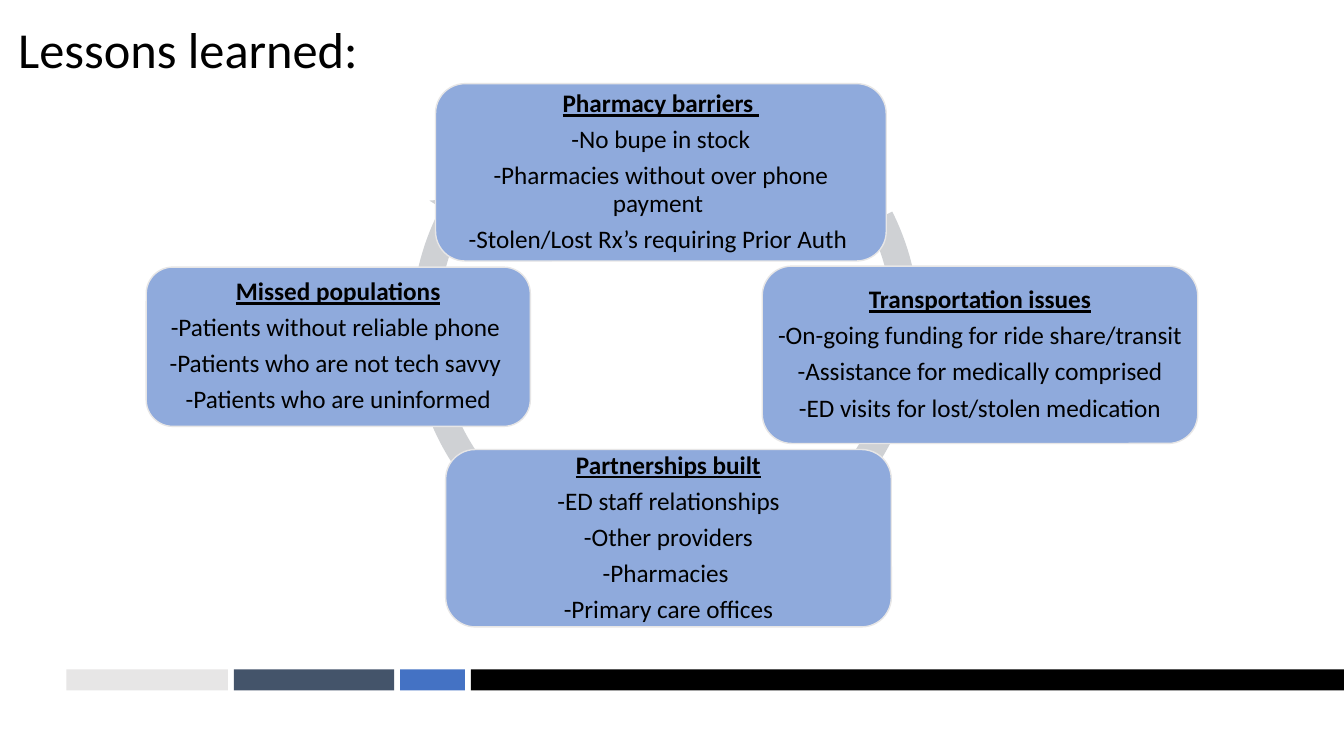
from pptx import Presentation
from pptx.dml.color import RGBColor
from pptx.enum.shapes import MSO_SHAPE as Shape
from pptx.enum.text import MSO_ANCHOR as Anchor, PP_ALIGN as Align
from pptx.util import Inches, Pt

COLORS = {
    "text": "000000",
    "card": "8FAADC",
    "card_line": "E7E6E6",
    "cycle": "CFD1D4",
    "pale": "E7E6E6",
    "slate": "44546A",
    "blue": "4472C4",
    "black": "000000",
}


def add_filled(preset, box, color):
    shape = slide.shapes.add_shape(preset, *[Inches(v) for v in box])
    shape.shadow.inherit = False
    shape.fill.solid()
    shape.fill.fore_color.rgb = RGBColor.from_string(COLORS[color])
    shape.line.fill.background()
    return shape


def write(paragraph, text, size=18, align=Align.CENTER, heading=False,
          line_spacing=0.9, space_after=6.3):
    paragraph.alignment = align
    paragraph.line_spacing = line_spacing
    paragraph.space_before = Pt(0)
    paragraph.space_after = Pt(space_after)
    run = paragraph.add_run()
    run.text = text
    run.font.name = "Calibri"
    run.font.size = Pt(size)
    run.font.bold = heading
    run.font.underline = heading
    run.font.color.rgb = RGBColor.from_string(COLORS["text"])


deck = Presentation()
deck.slide_width = Inches(13.33)
deck.slide_height = Inches(7.5)
slide = deck.slides.add_slide(deck.slide_layouts[5])

title = slide.shapes.title
title.left, title.top = Inches(0.08), Inches(0.12)
title.width, title.height = Inches(8.92), Inches(0.71)
title.text_frame.vertical_anchor = Anchor.MIDDLE
write(title.text_frame.paragraphs[0], "Lessons learned:", size=36,
      align=Align.LEFT, line_spacing=1, space_after=0)

bar_left = 0.66
for bar_width, bar_color in [(1.6, "pale"), (1.59, "slate"),
                             (0.64, "blue"), (8.66, "black")]:
    add_filled(Shape.RECTANGLE, (bar_left, 6.64, bar_width, 0.21), bar_color)
    bar_left += bar_width + 0.06

cycle = add_filled(Shape.CIRCULAR_ARROW, (3.95, 0.58, 5.3, 5.3), "cycle")
cycle.rotation = 16
for index, value in enumerate([0.05, 2.73, 114.87, 190.39, 0.05]):
    cycle.adjustments[index] = value

lessons = [
    ((4.32, 0.83, 4.47, 1.76), "Pharmacy barriers ", [
        "-No bupe in stock",
        "-Pharmacies without over phone payment ",
        "-Stolen/Lost Rx’s requiring Prior Auth "]),
    ((7.56, 2.64, 4.32, 1.76), "Transportation issues", [
        "-On-going funding for ride share/transit",
        "-Assistance for medically comprised",
        "-ED visits for lost/stolen medication"]),
    ((4.42, 4.46, 4.42, 1.76), "Partnerships built", [
        "-ED staff relationships",
        "-Other providers",
        "-Pharmacies ",
        "-Primary care offices"]),
    ((1.45, 2.65, 3.81, 1.58), "Missed populations", [
        "-Patients without reliable phone ",
        "-Patients who are not tech savvy ",
        "-Patients who are uninformed"]),
]

for box, heading, points in lessons:
    card = add_filled(Shape.ROUNDED_RECTANGLE, box, "card")
    card.line.color.rgb = RGBColor.from_string(COLORS["card_line"])
    card.line.width = Pt(1)
    frame = card.text_frame
    frame.word_wrap = True
    frame.vertical_anchor = Anchor.MIDDLE
    frame.margin_left = frame.margin_right = Inches(0.07)
    frame.margin_top = frame.margin_bottom = Inches(0.07)
    write(frame.paragraphs[0], heading, heading=True)
    for point in points:
        write(frame.add_paragraph(), point)

deck.save("out.pptx")
